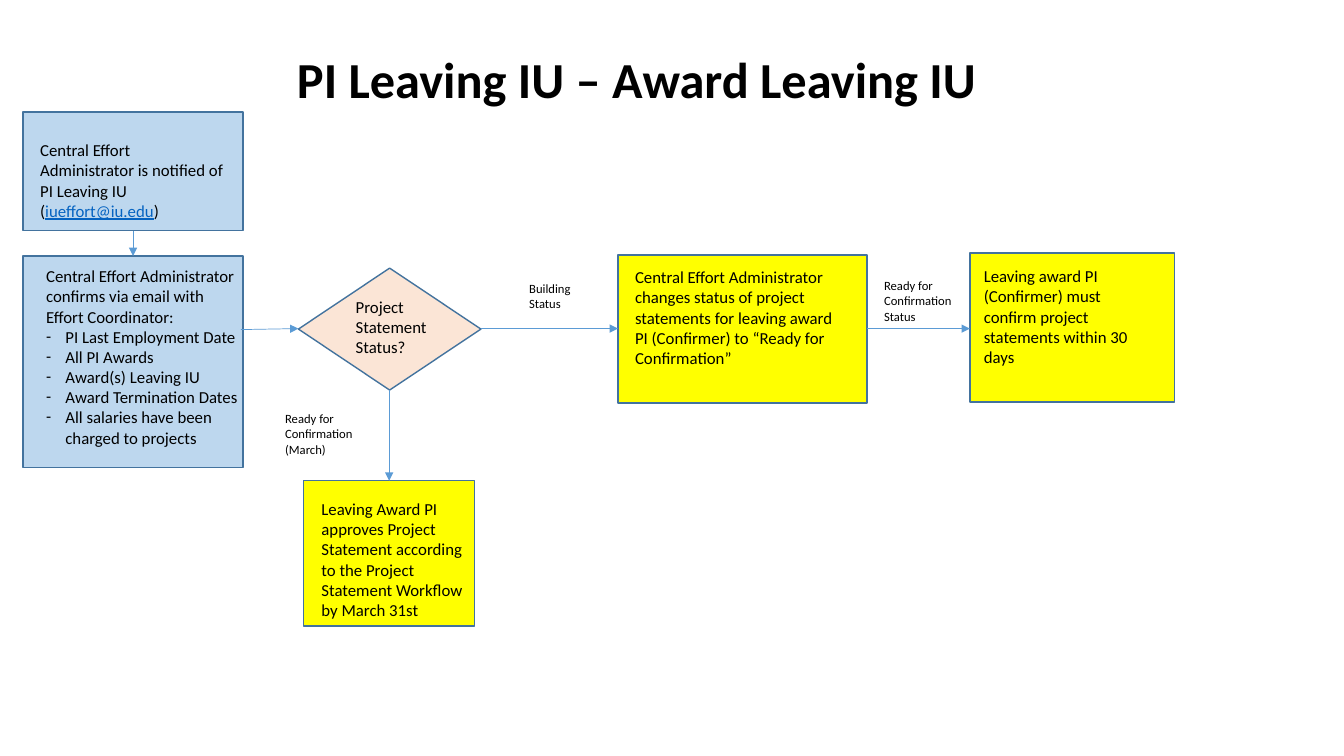
from dataclasses import dataclass

from lxml import etree
from pptx import Presentation
from pptx import util as u
from pptx.dml.color import RGBColor
from pptx.enum import shapes, text
from pptx.oxml import ns

PX = 9144
FONT = "Calibri"
COLORS = {
    "notice": "BDD7EE",
    "decision": "FBE5D6",
    "action": "FFFF00",
    "border": "43739E",
    "arrow": "5B9BD5",
    "ink": "000000",
    "link": "0563C1",
}
RECT = shapes.MSO_SHAPE.RECTANGLE
DECISION = shapes.MSO_SHAPE.FLOWCHART_DECISION


@dataclass(frozen=True)
class Step:
    box: tuple[int, int, int, int]
    color: str
    outline: int = RECT


@dataclass(frozen=True)
class Arrow:
    start: tuple[int, int]
    end: tuple[int, int]


@dataclass(frozen=True)
class Caption:
    box: tuple[int, int, int, int]
    wording: str
    size: int = 12
    items: tuple[str, ...] = ()
    email: str = ""


STEPS = [
    Step((23, 111, 218, 118), "notice"),
    Step((23, 254, 218, 210), "notice"),
    Step((296, 266, 181, 121), "decision", DECISION),
    Step((301, 477, 170, 144), "action"),
    Step((613, 253, 247, 147), "action"),
    Step((962, 251, 203, 148), "action"),
]
ARROWS = [
    Arrow((132, 229), (132, 254)),
    Arrow((239, 327), (296, 326)),
    Arrow((386, 387), (386, 477)),
    Arrow((477, 326), (613, 326)),
    Arrow((860, 326), (962, 326)),
]
CAPTIONS = [
    Caption((966, 259, 177, 111),
            "Leaving award PI (Confirmer) must confirm project statements within 30 days"),
    Caption((867, 271, 91, 56), "Ready for Confirmation Status", 9),
    Caption((620, 260, 230, 131),
            "Central Effort Administrator changes status of project statements "
            "for leaving award PI (Confirmer) to “Ready for Confirmation”"),
    Caption((515, 274, 82, 40), "Building Status", 9),
    Caption((309, 490, 173, 131),
            "Leaving Award PI approves Project Statement according to the "
            "Project Statement Workflow by March 31st"),
    Caption((273, 403, 96, 56), "Ready for Confirmation (March)", 9),
    Caption((343, 289, 94, 71), "Project Statement Status?"),
    Caption((36, 259, 212, 192),
            "Central Effort Administrator confirms via email with Effort Coordinator:",
            items=("PI Last Employment Date", "All PI Awards", "Award(s) Leaving IU",
                   "Award Termination Dates",
                   "All salaries have been charged to projects")),
    Caption((30, 134, 203, 91),
            "Central Effort Administrator is notified of PI Leaving IU (",
            email="iueffort@iu.edu"),
]


def px(*lengths: int) -> list[u.Emu]:
    return [u.Emu(length * PX) for length in lengths]


def rgb(name: str) -> RGBColor:
    return RGBColor.from_string(COLORS[name])


def format_run(run, size: int, color: str = "ink") -> None:
    run.font.name = FONT
    run.font.size = u.Pt(size)
    run.font.color.rgb = rgb(color)


def draw_title(slide, wording: str) -> None:
    title = slide.shapes.title
    title.left, title.top, title.width, title.height = px(75, 46, 1113, 62)
    frame = title.text_frame
    frame.text = wording
    frame.vertical_anchor = text.MSO_ANCHOR.MIDDLE
    frame.margin_left = frame.margin_right = frame.margin_bottom = 0
    frame.margin_top = px(1)[0]
    frame.paragraphs[0].alignment = text.PP_ALIGN.CENTER
    heading = frame.paragraphs[0].runs[0]
    format_run(heading, 36)
    heading.font.bold = True


def draw_step(slide, step: Step) -> None:
    node = slide.shapes.add_shape(step.outline, *px(*step.box))
    node.shadow.inherit = False
    node.fill.solid()
    node.fill.fore_color.rgb = rgb(step.color)
    node.line.color.rgb = rgb("border")
    node.line.width = u.Pt(1)


def draw_arrow(slide, arrow: Arrow) -> None:
    flow = slide.shapes.add_connector(
        shapes.MSO_CONNECTOR.STRAIGHT, *px(*arrow.start, *arrow.end))
    flow.line.color.rgb = rgb("arrow")
    flow.line.width = u.Pt(0.5)
    etree.SubElement(flow.line._get_or_add_ln(), ns.qn("a:tailEnd"), type="triangle")
    etree.SubElement(flow._element.spPr, ns.qn("a:effectLst"))


def add_dash(paragraph) -> None:
    indent = px(19)[0]
    properties = paragraph._p.get_or_add_pPr()
    properties.set("marL", str(indent))
    properties.set("indent", str(-indent))
    etree.SubElement(properties, ns.qn("a:buFont"), typeface=FONT)
    etree.SubElement(properties, ns.qn("a:buChar"), char="-")


def draw_caption(slide, caption: Caption) -> None:
    frame = slide.shapes.add_textbox(*px(*caption.box)).text_frame
    frame.word_wrap = True
    lead = frame.paragraphs[0]
    lead.text = caption.wording
    for item in caption.items:
        entry = frame.add_paragraph()
        entry.text = item
        add_dash(entry)
    for paragraph in frame.paragraphs:
        format_run(paragraph.runs[0], caption.size)
    if caption.email:
        address = lead.add_run()
        address.text = caption.email
        format_run(address, caption.size, "link")
        address.font.underline = True
        closing = lead.add_run()
        closing.text = ")"
        format_run(closing, caption.size)


def main() -> None:
    deck = Presentation()
    deck.slide_width, deck.slide_height = px(1333, 750)
    slide = deck.slides.add_slide(deck.slide_layouts.get_by_name("Title Only"))
    for step in STEPS:
        draw_step(slide, step)
    for arrow in ARROWS:
        draw_arrow(slide, arrow)
    for caption in CAPTIONS:
        draw_caption(slide, caption)
    draw_title(slide, "PI Leaving IU – Award Leaving IU")
    deck.save("out.pptx")


if __name__ == "__main__":
    main()
